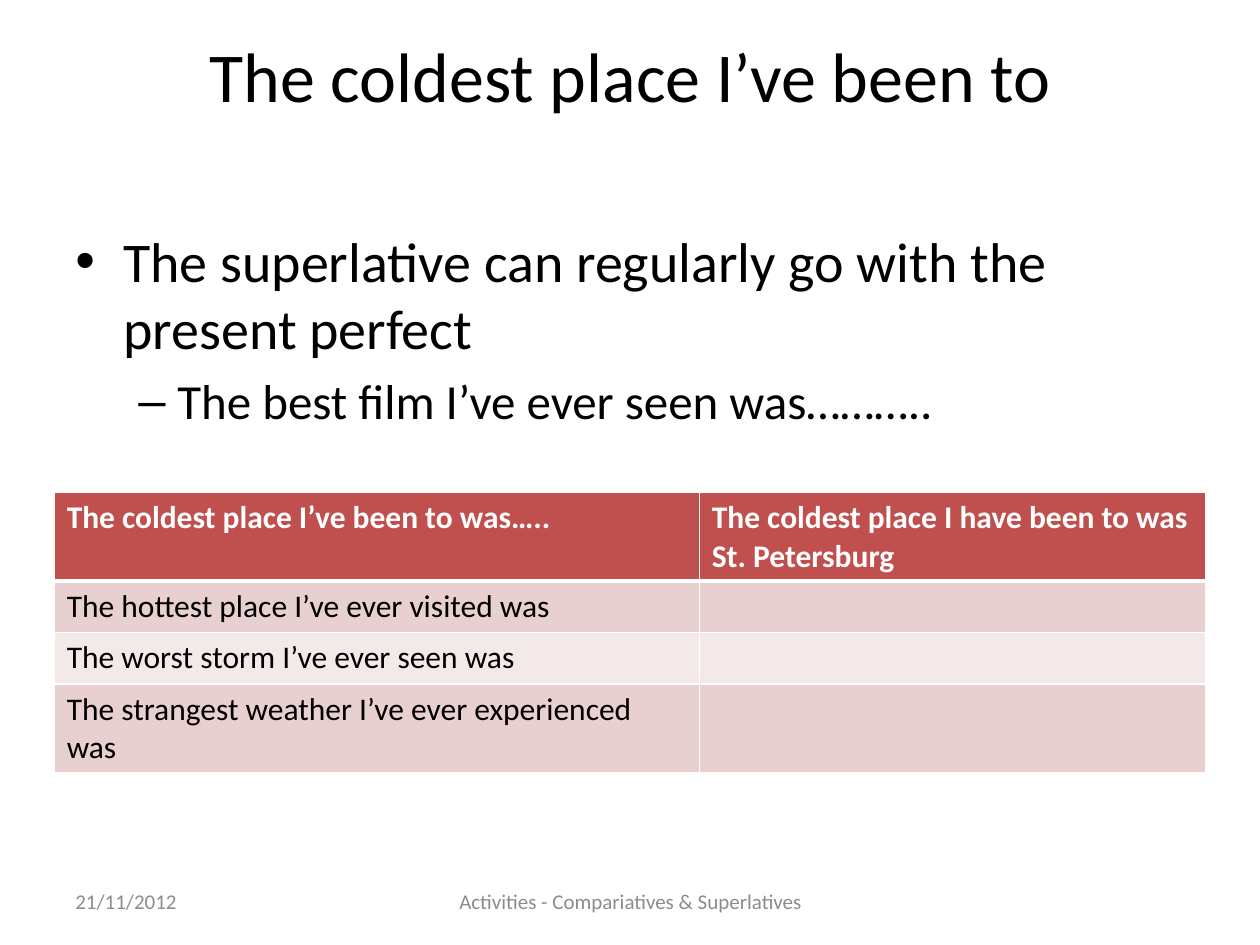
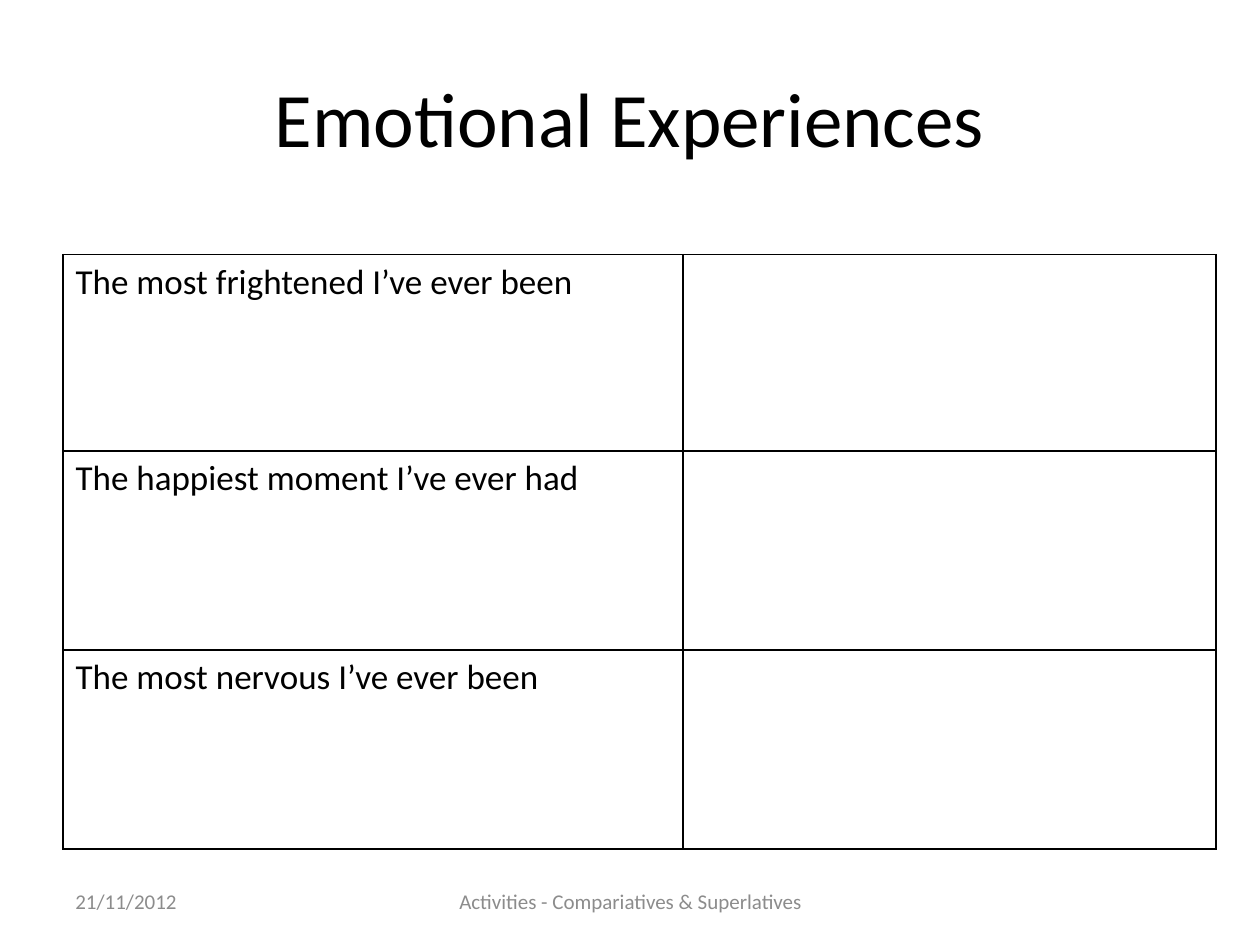
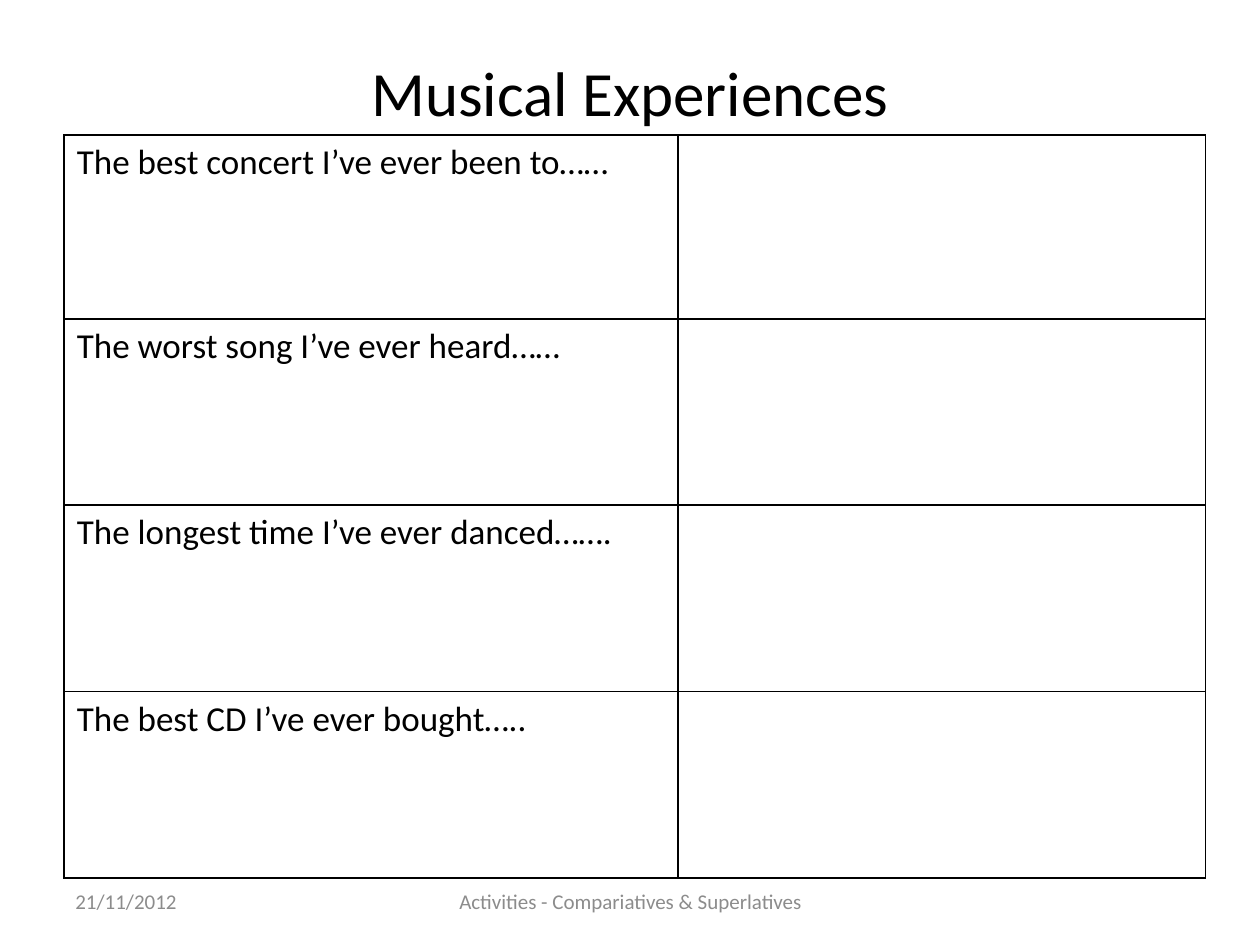
from lxml.etree import SubElement
from pptx import Presentation
from pptx.dml.color import RGBColor
from pptx.enum.text import MSO_ANCHOR as Anchor, PP_ALIGN as Align
from pptx.oxml.ns import qn
from pptx.util import Inches, Pt

FONT = "Calibri"
BLACK = "000000"
WHITE = "FFFFFF"
GREY = "8C8C8C"
RED = "C0504D"
BANDS = ("E8D0D0", "F4E9E9")
DATE = "21/11/2012"
FOOTER = "Activities - Compariatives & Superlatives"


def color(hex_string):
    return RGBColor.from_string(hex_string)


def add_run(paragraph, text, size, hex_string=BLACK, bold=False):
    run = paragraph.add_run()
    run.text = text
    run.font.name = FONT
    run.font.size = Pt(size)
    run.font.bold = bold
    run.font.color.rgb = color(hex_string)


def add_text_box(slide, left, top, width, height, anchor=Anchor.MIDDLE):
    box = slide.shapes.add_textbox(*map(Inches, (left, top, width, height)))
    box.text_frame.word_wrap = True
    box.text_frame.vertical_anchor = anchor
    return box.text_frame


def add_title(slide, text, size, height=1.25, line_below=False):
    paragraph = add_text_box(slide, 0.5, 0.3, 9, height).paragraphs[0]
    paragraph.alignment = Align.CENTER
    add_run(paragraph, text, size)
    if line_below:
        paragraph.add_line_break()
        SubElement(paragraph._p, qn("a:endParaRPr"), sz=str(size * 100))


def add_footers(slide):
    for text, left, width, alignment in (
        (FOOTER, 3.42, 3.17, Align.CENTER),
        (DATE, 0.5, 2.33, Align.LEFT),
    ):
        paragraph = add_text_box(slide, left, 6.95, width, 0.4).paragraphs[0]
        paragraph.alignment = alignment
        add_run(paragraph, text, 12, GREY)


def add_bullet(paragraph, text, size, bullet, margin, hanging, level=0):
    paragraph.level = level
    paragraph.space_before = Pt(size * 0.2)
    properties = paragraph._p.get_or_add_pPr()
    properties.set("marL", str(Inches(margin)))
    properties.set("indent", str(-Inches(hanging)))
    SubElement(properties, qn("a:buFont"), typeface="Arial")
    SubElement(properties, qn("a:buChar"), char=bullet)
    add_run(paragraph, text, size)


def set_borders(cell, hex_string, top=1, bottom=1):
    properties = cell._tc.get_or_add_tcPr()
    for side, width in (("L", 1), ("R", 1), ("T", top), ("B", bottom)):
        line = SubElement(properties, qn(f"a:ln{side}"), w=str(Pt(width)))
        fill = SubElement(line, qn("a:solidFill"))
        SubElement(fill, qn("a:srgbClr"), val=hex_string)


def add_table(slide, left, top, widths, heights):
    table = slide.shapes.add_table(
        len(heights), len(widths), Inches(left), Inches(top),
        Inches(sum(widths)), Inches(sum(heights)),
    ).table
    table.first_row = False
    table.horz_banding = False
    for column, width in zip(table.columns, widths):
        column.width = Inches(width)
    for row, height in zip(table.rows, heights):
        row.height = Inches(height)
    return table


def add_banded_table(slide, left, top, widths, heights, header, prompts):
    table = add_table(slide, left, top, widths, heights)
    for cell, text in zip(table.rows[0].cells, header):
        set_borders(cell, WHITE, bottom=3)
        cell.fill.solid()
        cell.fill.fore_color.rgb = color(RED)
        add_run(cell.text_frame.paragraphs[0], text, 18, WHITE, bold=True)
    for index, prompt in enumerate(prompts):
        for cell in table.rows[index + 1].cells:
            set_borders(cell, WHITE, top=1 if index else 3)
            cell.fill.solid()
            cell.fill.fore_color.rgb = color(BANDS[index % 2])
        paragraph = table.cell(index + 1, 0).text_frame.paragraphs[0]
        add_run(paragraph, prompt, 18)


def add_answer_grid(slide, left, top, widths, heights, prompts):
    table = add_table(slide, left, top, widths, heights)
    for cell in table.iter_cells():
        set_borders(cell, BLACK)
        cell.fill.background()
    for index, prompt in enumerate(prompts):
        add_run(table.cell(index, 0).text_frame.paragraphs[0], prompt, 20)


def add_slide(presentation):
    return presentation.slides.add_slide(presentation.slide_layouts[6])


def build_coldest_place(slide):
    add_title(slide, "The coldest place I’ve been to", 40, line_below=True)
    body = add_text_box(slide, 0.5, 1.75, 9, 4.95, Anchor.TOP)
    add_bullet(body.paragraphs[0],
               "The superlative can regularly go with the present perfect",
               32, "•", 0.38, 0.38)
    add_bullet(body.add_paragraph(), "The best film I’ve ever seen was………..",
               28, "–", 0.81, 0.31, level=1)
    add_banded_table(
        slide, 0.43, 3.91, (5.12, 4.02), (0.7, 0.41, 0.41, 0.7),
        ("The coldest place I’ve been to was…..",
         "The coldest place I have been to was St. Petersburg"),
        ("The hottest place I’ve ever visited was",
         "The worst storm I’ve ever seen was",
         "The strangest weather I’ve ever experienced was"),
    )
    add_footers(slide)


def build_emotional_experiences(slide):
    add_title(slide, "Emotional Experiences", 44)
    add_answer_grid(
        slide, 0.5, 2.02, (4.92, 4.23), (1.56, 1.58, 1.58),
        ("The most frightened I’ve ever been",
         "The happiest moment I’ve ever had",
         "The most nervous I’ve ever been"),
    )
    add_footers(slide)


def build_musical_experiences(slide):
    add_title(slide, "Musical Experiences", 36, height=0.85)
    add_answer_grid(
        slide, 0.51, 1.07, (4.87, 4.19), (1.46, 1.48, 1.48, 1.48),
        ("The best concert I’ve ever been to……",
         "The worst song I’ve ever heard……",
         "The longest time I’ve ever danced…….",
         "The best CD I’ve ever bought….."),
    )
    add_footers(slide)


def main():
    presentation = Presentation()
    presentation.slide_width = Inches(10)
    presentation.slide_height = Inches(7.5)
    for build in (build_coldest_place, build_emotional_experiences,
                  build_musical_experiences):
        build(add_slide(presentation))
    presentation.save("out.pptx")


if __name__ == "__main__":
    main()
